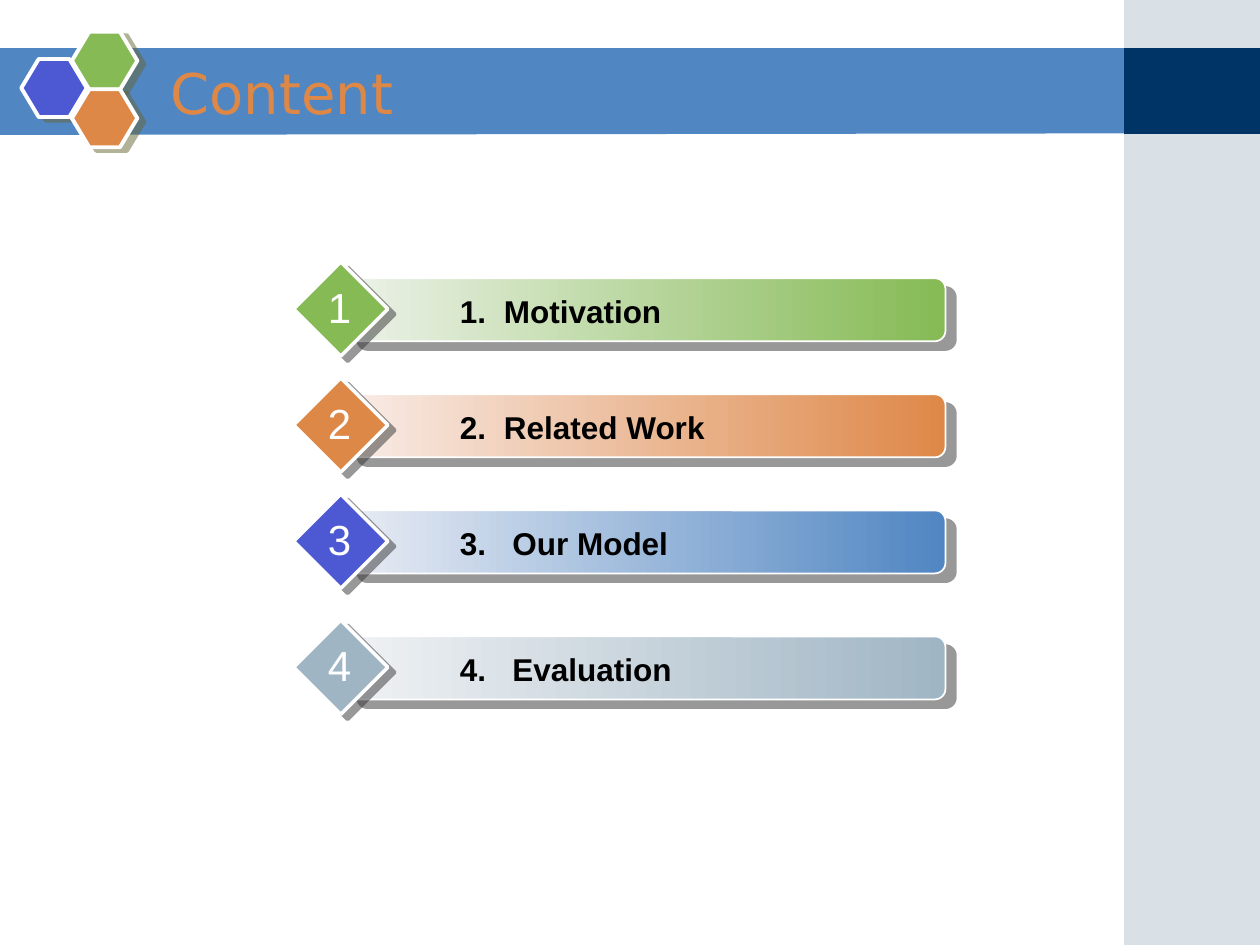
"""Build the Content agenda slide."""
from lxml.etree import SubElement
from pptx import Presentation
from pptx.dml.color import RGBColor
from pptx.enum.shapes import MSO_SHAPE as Shape
from pptx.enum.text import MSO_ANCHOR as Anchor, PP_ALIGN as Align
from pptx.oxml.ns import qn
from pptx.util import Cm, Pt

WHITE = RGBColor(0xFF, 0xFF, 0xFF)
BLACK = RGBColor(0, 0, 0)
BLUE = RGBColor(0x50, 0x86, 0xC2)
NAVY = RGBColor(0x00, 0x33, 0x66)
INDIGO = RGBColor(0x4C, 0x59, 0xD2)
GREEN = RGBColor(0x85, 0xBA, 0x54)
ORANGE = RGBColor(0xDE, 0x88, 0x48)
STEEL = RGBColor(0xA0, 0xB5, 0xC4)
PALE_GREEN = RGBColor(0xEC, 0xF2, 0xE8)
PALE_ORANGE = RGBColor(0xF8, 0xEC, 0xE7)
PALE_BLUE = RGBColor(0xE8, 0xEC, 0xF4)
PALE_STEEL = RGBColor(0xEF, 0xF2, 0xF4)
OLIVE = RGBColor(0x66, 0x66, 0x33)
CHARCOAL = RGBColor(0x33, 0x33, 0x33)


class AgendaPage:
    def __init__(self, page):
        self.page = page
        self.font = "Arial"
        self.title_font = "DejaVu Sans"

    def style(self, paragraph, size, color, bold=False, font=None):
        paragraph.font.name = font or self.font
        paragraph.font.size = Pt(size)
        paragraph.font.bold = bold
        paragraph.font.color.rgb = color

    def shape(self, kind, left, top, width, height, color, outline=0, pale=None):
        shape = self.page.shapes.add_shape(kind, Cm(left), Cm(top), Cm(width), Cm(height))
        if pale is None:
            shape.fill.solid()
            shape.fill.fore_color.rgb = color
        else:
            shape.fill.gradient()
            shape.fill.gradient_angle = 0
            for stop, shade in zip(shape.fill.gradient_stops, (pale, color)):
                stop.color.rgb = shade
        if outline:
            shape.line.color.rgb = WHITE
            shape.line.width = Pt(outline)
        else:
            shape.line.fill.background()
        shape.shadow.inherit = False
        return shape

    def fade(self, shape, percent):
        color = shape.element.spPr.find(qn("a:solidFill"))[0]
        SubElement(color, qn("a:alpha"), val=str(percent * 1000))

    def cast_shadow(self, shape, color, distance, angle):
        effects = shape.element.spPr.find(qn("a:effectLst"))
        shadow = SubElement(effects, qn("a:outerShdw"), dist=str(Pt(distance)),
                            dir=str(angle * 60000), algn="ctr", rotWithShape="0")
        tint = SubElement(shadow, qn("a:srgbClr"), val=str(color))
        SubElement(tint, qn("a:alpha"), val="50000")

    def band(self):
        builder = self.page.shapes.build_freeform(Cm(-0.03), Cm(0.97))
        builder.add_line_segments(
            [(Cm(22.73), Cm(0.97)), (Cm(22.73), Cm(2.69)), (Cm(-0.03), Cm(2.72))])
        band = builder.convert_to_shape()
        band.fill.solid()
        band.fill.fore_color.rgb = BLUE
        band.line.fill.background()
        band.shadow.inherit = False

    def hexagon(self, left, top, color):
        hexagon = self.shape(Shape.HEXAGON, left, top, 1.32, 1.17, color, 2.25)
        hexagon.adjustments[0] = 0.3
        self.cast_shadow(hexagon, OLIVE, 4.5, 27)

    def title(self, text):
        title = self.page.shapes.title
        title.left, title.top, title.width, title.height = Cm(3.18), Cm(1.07), Cm(18.62), Cm(1.57)
        title.text_frame.text = text
        title.text_frame.vertical_anchor = Anchor.MIDDLE
        paragraph = title.text_frame.paragraphs[0]
        paragraph.alignment = Align.LEFT
        self.style(paragraph, 32, ORANGE, font=self.title_font)
        title.element.getparent().append(title.element)

    def text(self, text, left, top, width, height, wrap=True):
        box = self.page.shapes.add_textbox(Cm(left), Cm(top), Cm(width), Cm(height))
        box.text_frame.word_wrap = wrap
        box.text_frame.text = text
        return box.text_frame

    def item(self, number, label, gap, top, color, pale, badge):
        bar = self.shape(Shape.ROUNDED_RECTANGLE, 6.99, top, 12.07, 1.27, color, 1, pale)
        self.cast_shadow(bar, CHARCOAL, 7.8, 40)
        diamond = self.shape(Shape.DIAMOND, 5.92, top - 0.33, 1.9, 1.9, badge, 2)
        self.cast_shadow(diamond, CHARCOAL, 5, 37)

        frame = self.text(f"{number}.\t{label}", 7.62, top + 0.15, 11.43, 1.02)
        frame.margin_left = Cm(1.65)
        paragraph = frame.paragraphs[0]
        properties = paragraph._p.get_or_add_pPr()
        properties.set("marL", str(Cm(gap)))
        properties.set("indent", str(-Cm(gap)))
        self.style(paragraph, 18, BLACK, bold=True)

        digit = self.text(str(number), 6.35, top - 0.06, 0.99, 1.27, wrap=False).paragraphs[0]
        digit.alignment = Align.CENTER
        self.style(digit, 24, WHITE)


def main():
    deck = Presentation()
    deck.slide_width, deck.slide_height = Cm(25.4), Cm(19.05)
    agenda = AgendaPage(deck.slides.add_slide(deck.slide_layouts[5]))

    agenda.band()
    sidebar = agenda.shape(Shape.RECTANGLE, 22.66, 0, 2.74, 19.05, STEEL)
    agenda.fade(sidebar, 40)
    agenda.shape(Shape.RECTANGLE, 22.66, 0.97, 2.74, 1.73, NAVY)
    for left, top, color in ((0.43, 1.19, INDIGO), (1.45, 0.64, GREEN), (1.45, 1.8, ORANGE)):
        agenda.hexagon(left, top, color)
    agenda.title("Content")

    items = (
        ("Motivation", 0.89, 5.61, GREEN, PALE_GREEN, GREEN),
        ("Related Work", 0.89, 7.95, ORANGE, PALE_ORANGE, ORANGE),
        ("Our Model", 1.06, 10.29, BLUE, PALE_BLUE, INDIGO),
        ("Evaluation", 1.06, 12.83, STEEL, PALE_STEEL, STEEL),
    )
    for number, item in enumerate(items, 1):
        agenda.item(number, *item)
    deck.save("out.pptx")


if __name__ == "__main__":
    main()
